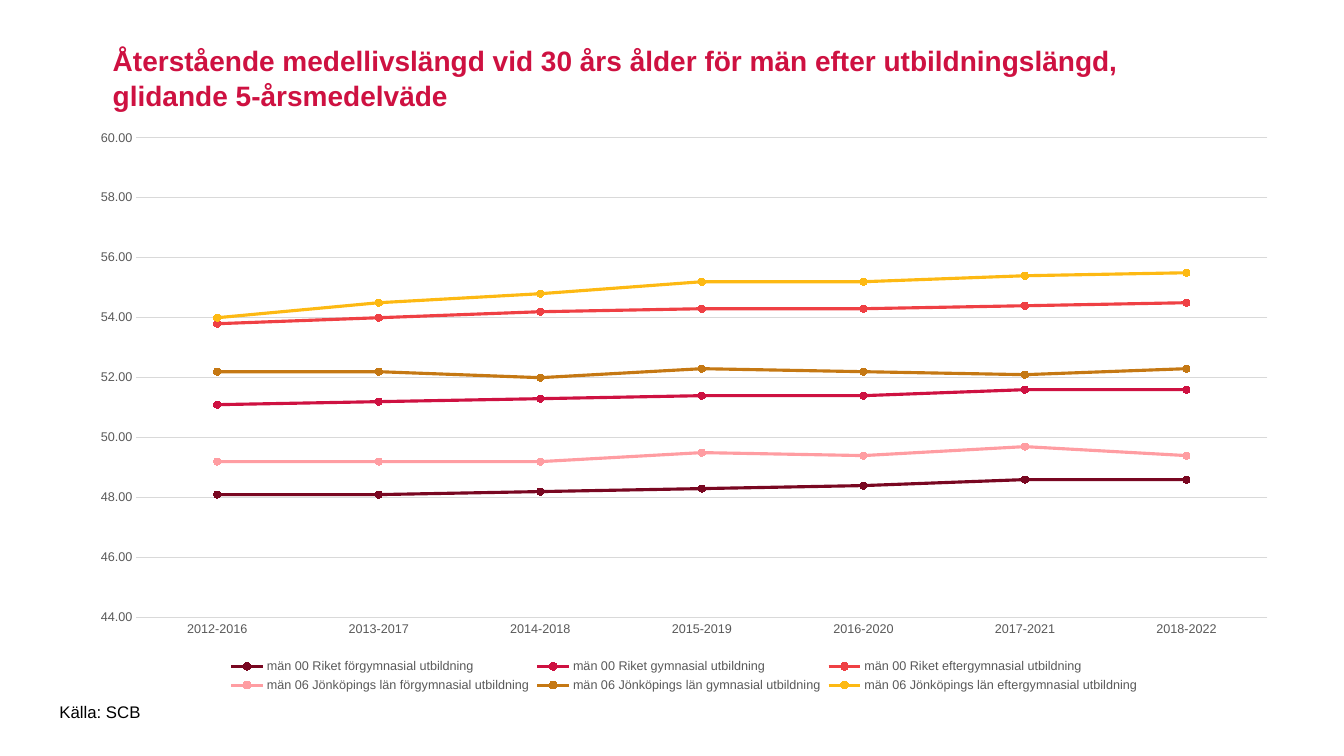
from dataclasses import dataclass

from pptx import Presentation, util as u
from pptx.chart.data import CategoryChartData
from pptx.dml.color import RGBColor
from pptx.enum import chart as ch, text


@dataclass(frozen=True)
class Theme:
    font: str = "Arial"
    accent: str = "CE1141"
    ink: str = "000000"
    label: str = "595959"
    grid: str = "D9D9D9"
    lines: tuple = ("790721", "CE1141", "EF4044", "FF9DA2", "C57813", "FDB913")
    title_size: float = 20
    source_size: float = 12
    label_size: float = 9
    line_width: float = 2.25
    grid_width: float = 0.75
    marker_size: int = 5


T = Theme()
WIDTH, HEIGHT = u.Inches(13.33), u.Inches(7.5)
COL, ROW = WIDTH / 100, HEIGHT / 100

TITLE_BOX = (7.65, 5.6, 76.82, 9.2)
CHART_BOX = (5.7, 15.73, 90.4, 76.4)
SOURCE_BOX = (3.68, 92.13, 17.63, 4)

PERIODS = [f"{year}-{year + 4}" for year in range(2012, 2019)]
REGIONS = ("män 00 Riket", "män 06 Jönköpings län")
LEVELS = ("förgymnasial", "gymnasial", "eftergymnasial")
NAMES = [f"{region} {level} utbildning" for region in REGIONS for level in LEVELS]
VALUES = [
    (48.1, 48.1, 48.2, 48.3, 48.4, 48.6, 48.6),
    (51.1, 51.2, 51.3, 51.4, 51.4, 51.6, 51.6),
    (53.8, 54, 54.2, 54.3, 54.3, 54.4, 54.5),
    (49.2, 49.2, 49.2, 49.5, 49.4, 49.7, 49.4),
    (52.2, 52.2, 52, 52.3, 52.2, 52.1, 52.3),
    (54, 54.5, 54.8, 55.2, 55.2, 55.4, 55.5),
]


def place(box):
    x, y, w, h = box
    return int(x * COL), int(y * ROW), int(w * COL), int(h * ROW)


def style_font(font, size, color, bold=False):
    font.name, font.size, font.bold = T.font, u.Pt(size), bold
    font.color.rgb = RGBColor.from_string(color)


def style_line(line, color, width):
    line.color.rgb = RGBColor.from_string(color)
    line.width = u.Pt(width)


def add_text(s, box, words, size, color, bold=False, spacing=1.0,
             anchor=text.MSO_ANCHOR.TOP):
    tf = s.shapes.add_textbox(*place(box)).text_frame
    tf.word_wrap = True
    tf.vertical_anchor = anchor
    p = tf.paragraphs[0]
    p.line_spacing = spacing
    r = p.add_run()
    r.text = words
    style_font(r.font, size, color, bold)


def style_axes(chart):
    cat, val = chart.category_axis, chart.value_axis
    for axis in (cat, val):
        axis.major_tick_mark = axis.minor_tick_mark = ch.XL_TICK_MARK.NONE
        style_font(axis.tick_labels.font, T.label_size, T.label)
    style_line(cat.format.line, T.grid, T.grid_width)
    val.format.line.fill.background()
    val.minimum_scale, val.maximum_scale, val.major_unit = 44, 60, 2
    val.tick_labels.number_format = "0.00"
    val.tick_labels.number_format_is_linked = False
    style_line(val.major_gridlines.format.line, T.grid, T.grid_width)


def style_series(series, color):
    series.smooth = False
    style_line(series.format.line, color, T.line_width)
    marker = series.marker
    marker.style, marker.size = ch.XL_MARKER_STYLE.CIRCLE, T.marker_size
    marker.format.fill.solid()
    marker.format.fill.fore_color.rgb = RGBColor.from_string(color)
    style_line(marker.format.line, color, T.grid_width)


def add_life_chart(s, box):
    data = CategoryChartData(number_format="0.00")
    data.categories = PERIODS
    for name, values in zip(NAMES, VALUES):
        data.add_series(name, values)
    chart = s.shapes.add_chart(ch.XL_CHART_TYPE.LINE_MARKERS, *place(box), data).chart
    style_font(chart.font, T.label_size, T.label)
    chart.has_title = False
    chart.plots[0].vary_by_categories = False
    chart.has_legend = True
    chart.legend.position = ch.XL_LEGEND_POSITION.BOTTOM
    chart.legend.include_in_layout = False
    style_font(chart.legend.font, T.label_size, T.label)
    style_axes(chart)
    for series, color in zip(chart.plots[0].series, T.lines):
        style_series(series, color)


def main():
    prs = Presentation()
    prs.slide_width, prs.slide_height = WIDTH, HEIGHT
    s = prs.slides.add_slide(prs.slide_layouts[6])
    add_text(s, TITLE_BOX,
             "Återstående medellivslängd vid 30 års ålder för män efter "
             "utbildningslängd, glidande 5-årsmedelväde",
             T.title_size, T.accent, bold=True, spacing=1.05,
             anchor=text.MSO_ANCHOR.MIDDLE)
    add_text(s, SOURCE_BOX, "Källa: SCB", T.source_size, T.ink)
    add_life_chart(s, CHART_BOX)
    prs.save("out.pptx")


if __name__ == "__main__":
    main()
